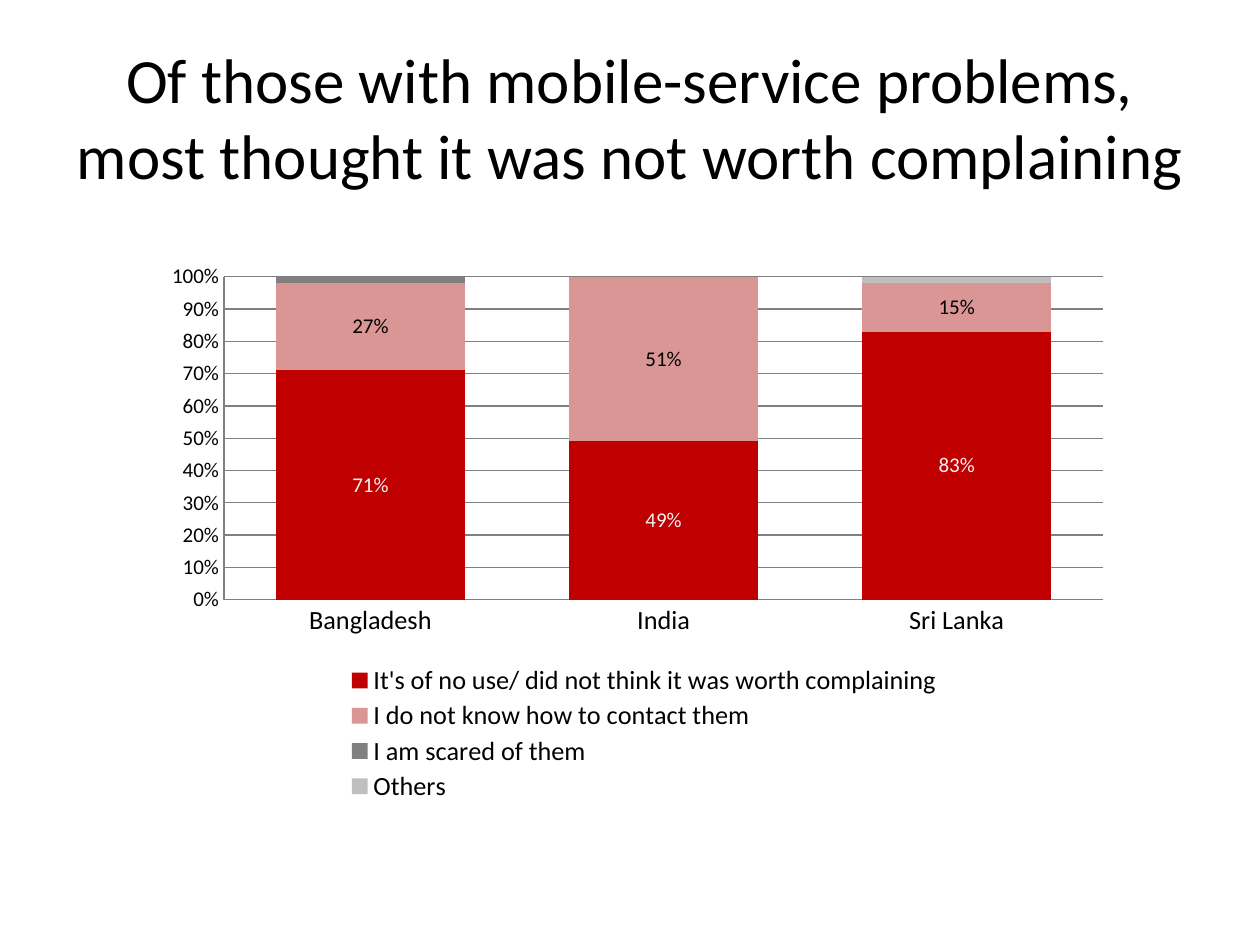
from lxml import etree
from pptx import Presentation
from pptx.chart.data import CategoryChartData
from pptx.dml.color import RGBColor
from pptx.enum.chart import XL_CHART_TYPE, XL_LEGEND_POSITION, XL_TICK_MARK
from pptx.enum.text import MSO_ANCHOR, PP_ALIGN
from pptx.oxml.ns import qn
from pptx.util import Cm, Pt

STACKED = XL_CHART_TYPE.COLUMN_STACKED_100
BOTTOM = XL_LEGEND_POSITION.BOTTOM
NO_TICK = XL_TICK_MARK.NONE
CENTER = PP_ALIGN.CENTER
MIDDLE = MSO_ANCHOR.MIDDLE

FONT = "Calibri"
COLORS = {
    "text": "000000",
    "light_text": "F2F2F2",
    "line": "808080",
    "no_use": "C00000",
    "no_contact": "D99694",
    "scared": "808080",
    "others": "BFBFBF",
}
COUNTRIES = ["Bangladesh", "India", "Sri Lanka"]
# Reason, shares by country, fill colour, label colour (None: no labels)
REASONS = [
    ("It's of no use/ did not think it was worth complaining",
     (0.71, 0.49, 0.83), "no_use", "light_text"),
    ("I do not know how to contact them", (0.27, 0.51, 0.15), "no_contact", "text"),
    ("I am scared of them", (0.02, 0, 0), "scared", None),
    ("Others", (0, 0, 0.02), "others", None),
]


def rgb(name):
    return RGBColor.from_string(COLORS[name])


def set_font(font, size, color="text"):
    font.name = FONT
    font.size = Pt(size)
    font.bold = False
    font.color.rgb = rgb(color)


def set_layout(parent, index, x, y, w, h, inner=False):
    """Fix a chart part at fractions of the chart's width and height."""
    for old in parent.findall(qn("c:layout")):
        parent.remove(old)
    layout = etree.Element(qn("c:layout"))
    manual = etree.SubElement(layout, qn("c:manualLayout"))
    settings = [("layoutTarget", "inner")] if inner else []
    settings += [("xMode", "edge"), ("yMode", "edge"),
                 ("x", x), ("y", y), ("w", w), ("h", h)]
    for tag, value in settings:
        etree.SubElement(manual, qn(f"c:{tag}")).set("val", str(value))
    parent.insert(index, layout)


def add_title(slide, text):
    title = slide.shapes.title
    title.left, title.top, title.width, title.height = Cm(1.27), Cm(0.76), Cm(22.86), Cm(3.18)
    frame = title.text_frame
    frame.word_wrap = True
    frame.vertical_anchor = MIDDLE
    paragraph = frame.paragraphs[0]
    paragraph.alignment = CENTER
    run = paragraph.add_run()
    run.text = text
    set_font(run.font, 36)


def format_axes(chart):
    for axis, size in ((chart.category_axis, 15), (chart.value_axis, 12)):
        axis.major_tick_mark = axis.minor_tick_mark = NO_TICK
        set_font(axis.tick_labels.font, size)
        axis.format.line.color.rgb = rgb("line")
    shares = chart.value_axis
    shares.minimum_scale, shares.maximum_scale, shares.major_unit = 0, 1, 0.1
    shares.tick_labels.number_format = "0%"
    shares.tick_labels.number_format_is_linked = False
    shares.has_major_gridlines = True
    shares.major_gridlines.format.line.color.rgb = rgb("line")


def format_series(series, fill, label_color):
    series.format.fill.solid()
    series.format.fill.fore_color.rgb = rgb(fill)
    if label_color:
        labels = series.data_labels
        labels.show_value = True
        labels.number_format = "0%"
        labels.number_format_is_linked = False
        set_font(labels.font, 12, label_color)


def add_reasons_chart(slide):
    data = CategoryChartData(number_format="0%")
    data.categories = COUNTRIES
    for reason, shares, _, _ in REASONS:
        data.add_series(reason, shares)
    chart = slide.shapes.add_chart(
        STACKED, Cm(3.15), Cm(5.13), Cm(19.48), Cm(11.23), data).chart
    chart.has_title = False
    set_font(chart.font, 10)
    format_axes(chart)

    plot = chart.plots[0]
    plot.gap_width, plot.overlap = 55, 100
    plot.vary_by_categories = False
    for series, (_, _, fill, label_color) in zip(plot.series, REASONS):
        format_series(series, fill, label_color)

    chart.has_legend = True
    legend = chart.legend
    legend.position = BOTTOM
    legend.include_in_layout = False
    set_font(legend.font, 15)

    chart_root = chart.element
    set_layout(chart_root.find(".//" + qn("c:plotArea")), 0, 0.07, 0.04, 0.91, 0.58, inner=True)
    set_layout(chart_root.find(".//" + qn("c:legend")), 1, 0.19, 0.73, 0.63, 0.26)


def main():
    prs = Presentation()
    prs.slide_width, prs.slide_height = Cm(25.4), Cm(19.05)
    slide = prs.slides.add_slide(prs.slide_layouts[5])
    add_title(slide, "Of those with mobile-service problems, "
                     "most thought it was not worth complaining")
    add_reasons_chart(slide)
    prs.save("out.pptx")


if __name__ == "__main__":
    main()
